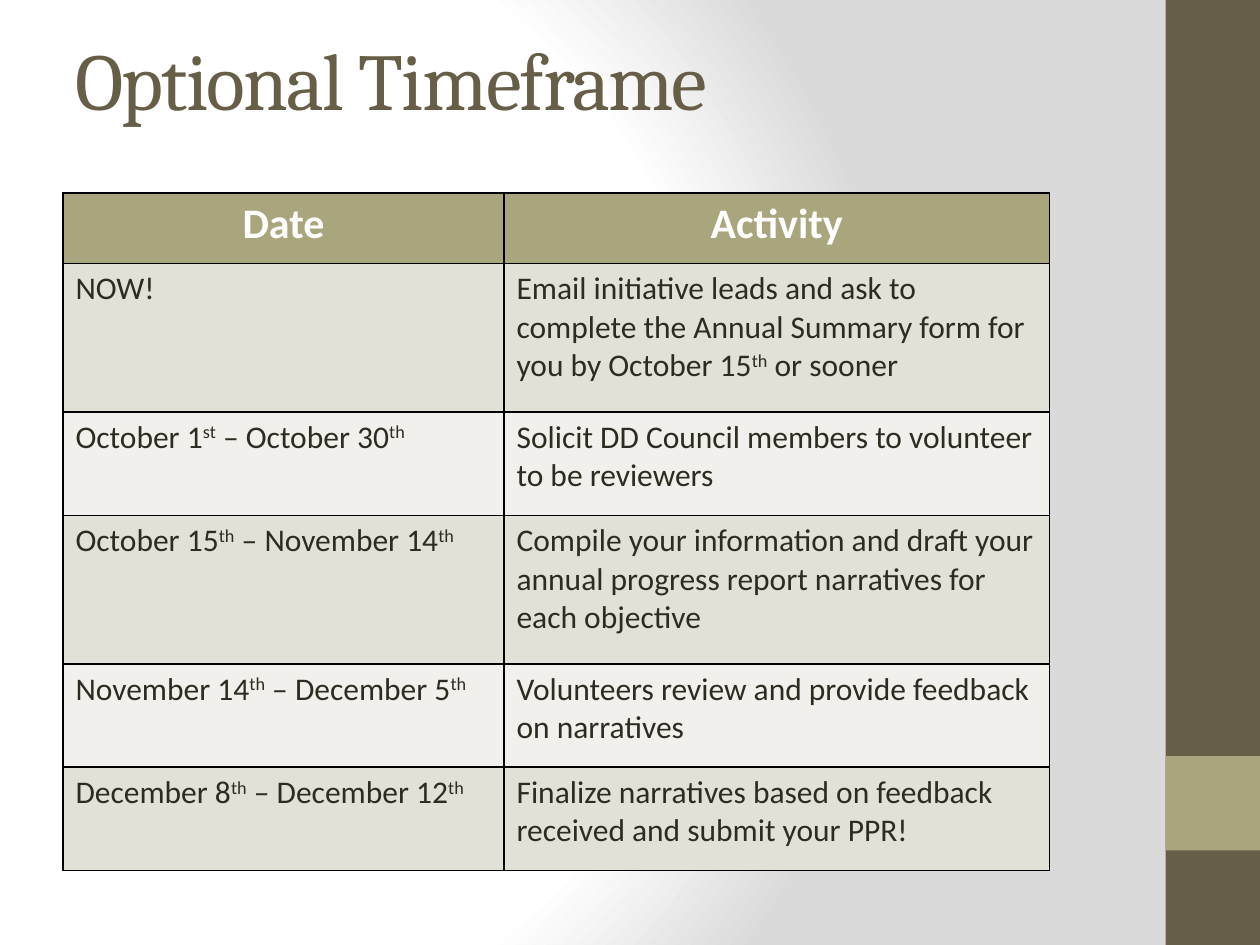
from pptx import Presentation
from pptx.dml.color import RGBColor
from pptx.enum.shapes import MSO_SHAPE
from pptx.enum.text import MSO_ANCHOR, PP_ALIGN
from pptx.oxml import parse_xml
from pptx.oxml.ns import nsdecls, qn
from pptx.util import Inches, Pt

RECT = MSO_SHAPE.RECTANGLE
MIDDLE = MSO_ANCHOR.MIDDLE
LEFT, CENTER = PP_ALIGN.LEFT, PP_ALIGN.CENTER

COLS, ROWS = 40, 30  # grid of quarter inches
HUES = {
    "brown": "675E47", "olive": "A9A57C", "ink": "2F2B20", "white": "FFFFFF",
    "gray": "DADADA", "dark": "E2E1D7", "light": "F1F0EC", "line": "000000",
}
HEAD = ["Date", "Activity"]
# A pair of carets marks raised text
PLAN = [
    ("NOW!", "Email initiative leads and ask to complete the Annual Summary "
     "form for you by October 15^th^ or sooner"),
    ("October 1^st^ – October 30^th^",
     "Solicit DD Council members to volunteer to be reviewers"),
    ("October 15^th^ – November 14^th^", "Compile your information and draft "
     "your annual progress report narratives for each objective"),
    ("November 14^th^ – December 5^th^",
     "Volunteers review and provide feedback on narratives"),
    ("December 8^th^ – December 12^th^",
     "Finalize narratives based on feedback received and submit your PPR!"),
]
SHORT, TALL = 3.28, 4.72  # rows with two and three lines of text
WIDTHS = [14, 17.32]
HEIGHTS = [2.24, TALL, SHORT, TALL, SHORT, SHORT]


class Deck:
    def __init__(self):
        self.prs = Presentation()
        self.prs.slide_width, self.prs.slide_height = Inches(10), Inches(7.5)
        self.slide = self.prs.slides.add_slide(self.prs.slide_layouts[6])

    def x(self, n):
        return round(self.prs.slide_width * n / COLS)

    def y(self, n):
        return round(self.prs.slide_height * n / ROWS)

    def box(self, x, y, w, h):
        return self.x(x), self.y(y), self.x(w), self.y(h)

    def hue(self, name):
        return RGBColor.from_string(HUES[name])

    def glow(self, stops):
        self.slide.background.fill.gradient()
        old = self.slide.element.find(".//" + qn("a:gradFill"))
        marks = "".join(
            f'<a:gs pos="{at * 1000}"><a:srgbClr val="{HUES[name]}"/></a:gs>'
            for at, name in stops)
        new = parse_xml(
            f'<a:gradFill {nsdecls("a")} rotWithShape="1">'
            f'<a:gsLst>{marks}</a:gsLst><a:path path="circle">'
            '<a:fillToRect l="20000" t="50000" r="100000" b="50000"/>'
            '</a:path></a:gradFill>')
        old.getparent().replace(old, new)

    def block(self, at, name):
        shape = self.slide.shapes.add_shape(RECT, *self.box(*at))
        shape.shadow.inherit = False
        shape.fill.solid()
        shape.fill.fore_color.rgb = self.hue(name)
        shape.line.fill.background()

    def text(self, para, words, size, name, face="Calibri", bold=False):
        for i, part in enumerate(words.split("^")):
            if not part:
                continue
            run = para.add_run()
            run.text = part
            font = run.font
            font.name, font.size, font.bold = face, Pt(size), bold
            font.color.rgb = self.hue(name)
            if i % 2:
                run._r.get_or_add_rPr().set("baseline", "30000")

    def title(self, at, words):
        frame = self.slide.shapes.add_textbox(*self.box(*at)).text_frame
        frame.word_wrap = True
        frame.vertical_anchor = MIDDLE
        para = frame.paragraphs[0]
        self.text(para, words, 46, "brown", "Cambria")
        para.runs[0]._r.get_or_add_rPr().set("spc", "-100")

    def edge(self, cell):
        props = cell._tc.get_or_add_tcPr()
        for i, side in enumerate("LRTB"):
            props.insert(i, parse_xml(
                f'<a:ln{side} {nsdecls("a")} w="12700"><a:solidFill>'
                f'<a:srgbClr val="{HUES["line"]}"/></a:solidFill></a:ln{side}>'))

    def table(self, x, y, widths, heights, data):
        at = self.box(x, y, sum(widths), sum(heights))
        grid = self.slide.shapes.add_table(len(heights), len(widths), *at).table
        for col, w in zip(grid.columns, widths):
            col.width = self.x(w)
        for r, (row, h) in enumerate(zip(grid.rows, heights)):
            row.height = self.y(h)
            top = r == 0
            tint = "olive" if top else "dark" if r % 2 else "light"
            for cell, words in zip(row.cells, data[r]):
                cell.fill.solid()
                cell.fill.fore_color.rgb = self.hue(tint)
                self.edge(cell)
                para = cell.text_frame.paragraphs[0]
                para.alignment = CENTER if top else LEFT
                self.text(para, words, 24 if top else 18,
                          "white" if top else "ink", bold=top)


def main():
    deck = Deck()
    # Background and side band
    deck.glow([(0, "white"), (75, "white"), (100, "gray")])
    deck.block((37, 0, 3, ROWS), "brown")
    deck.block((37, 24, 3, 3), "olive")
    # Title and schedule
    deck.title((2, 0, 33.32, 5), "Optional Timeframe")
    deck.table(2, 6.12, WIDTHS, HEIGHTS, [HEAD] + PLAN)
    deck.prs.save("out.pptx")


if __name__ == "__main__":
    main()
